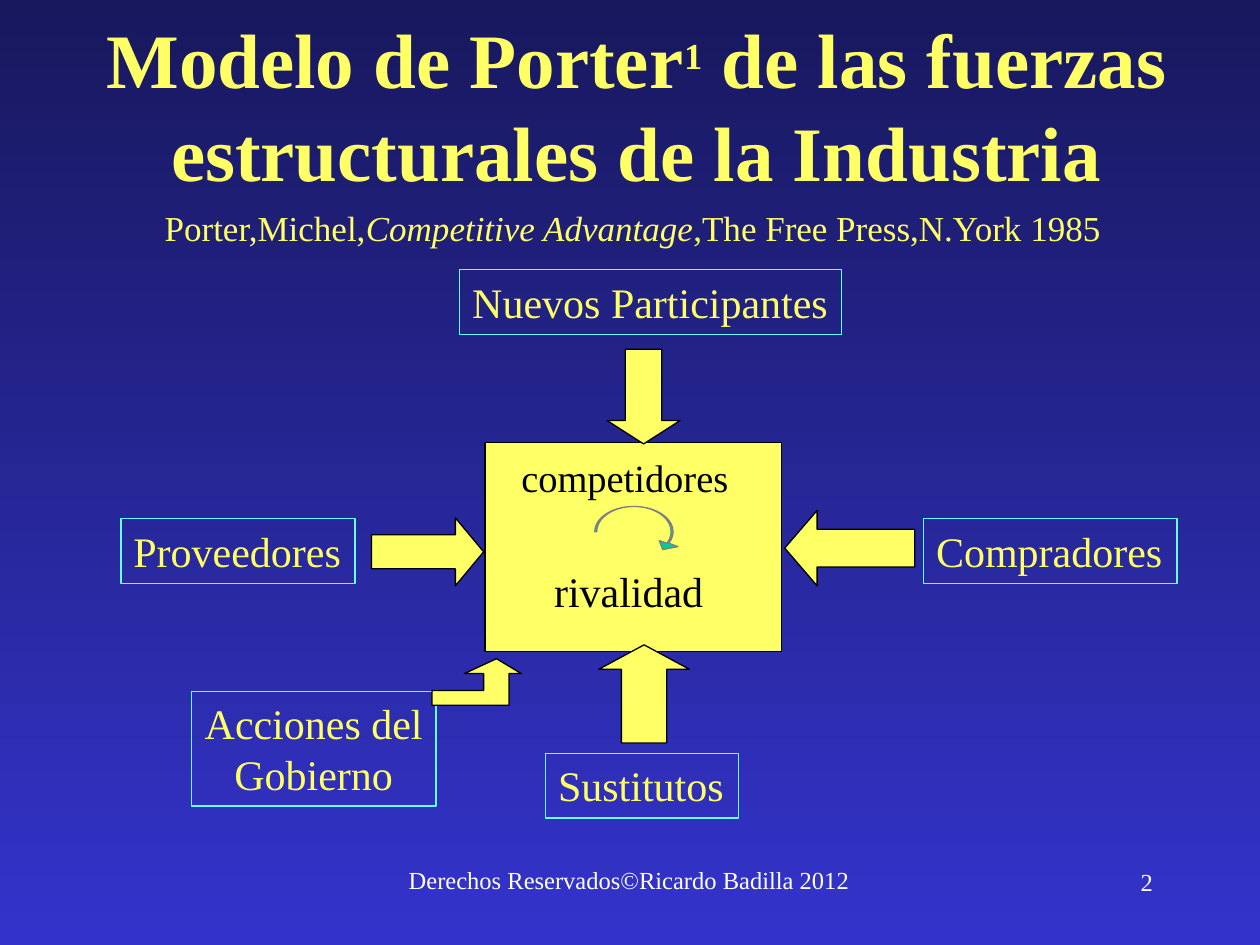
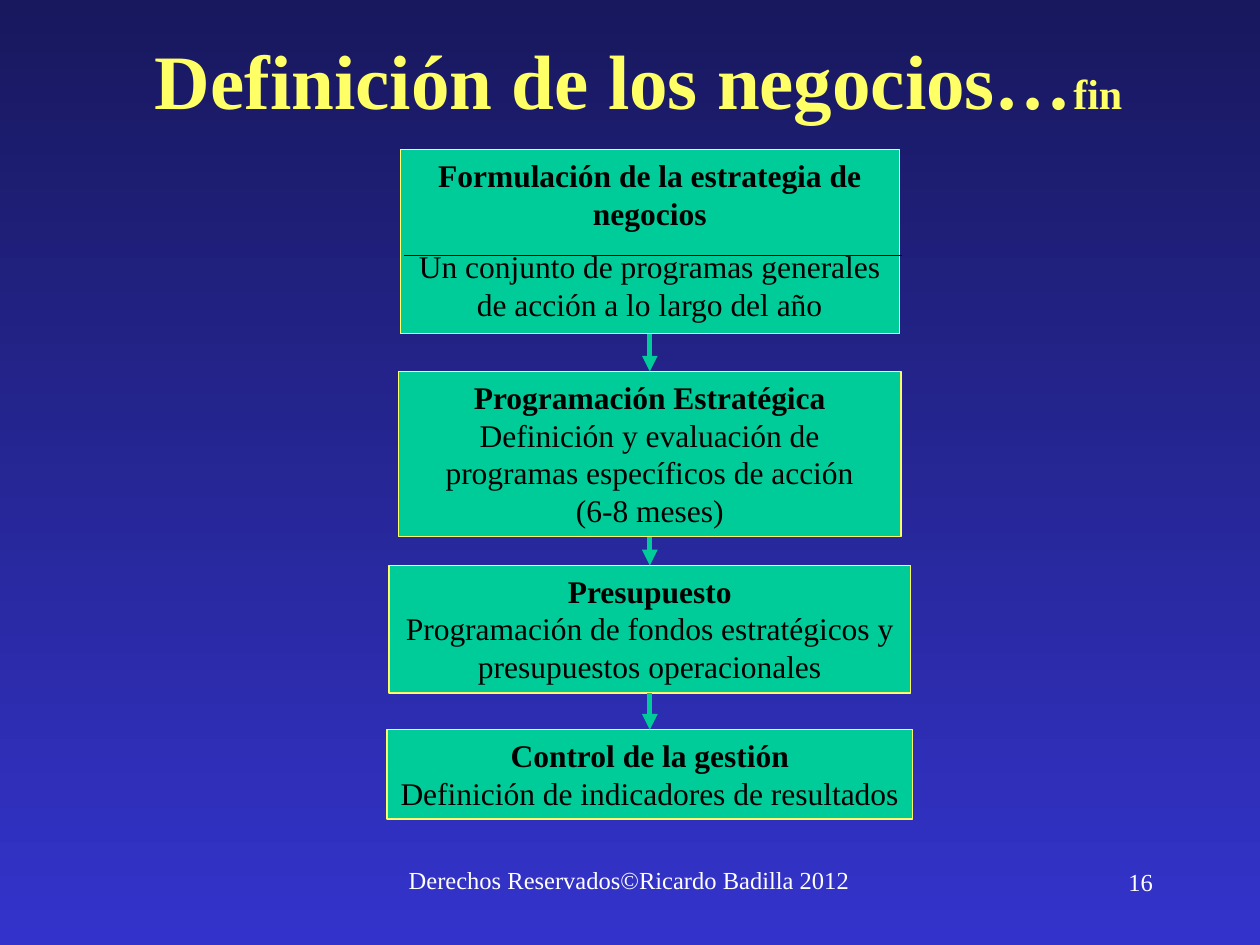
from collections import namedtuple
from math import cos, radians, sin

from lxml import etree
from pptx import Presentation
from pptx.dml.color import RGBColor
from pptx.enum.shapes import MSO_CONNECTOR, MSO_SHAPE
from pptx.enum.text import MSO_ANCHOR, PP_ALIGN
from pptx.oxml.ns import qn
from pptx.util import Cm, Pt

Box = namedtuple("Box", "left top width height")
LEFT, CENTER, RIGHT = PP_ALIGN.LEFT, PP_ALIGN.CENTER, PP_ALIGN.RIGHT
TOP, MIDDLE = MSO_ANCHOR.TOP, MSO_ANCHOR.MIDDLE
STRAIGHT = MSO_CONNECTOR.STRAIGHT
RECTANGLE = MSO_SHAPE.RECTANGLE
RIGHT_ARROW, LEFT_ARROW = MSO_SHAPE.RIGHT_ARROW, MSO_SHAPE.LEFT_ARROW
UP_ARROW, DOWN_ARROW = MSO_SHAPE.UP_ARROW, MSO_SHAPE.DOWN_ARROW
BOTTOM_SITE, TOP_SITE = 2, 0

FONT = "Times New Roman"
COLORS = {
    "night": "18185E",
    "blue": "3333CC",
    "yellow": "FFFF66",
    "cyan": "66FFFF",
    "green": "00CC99",
    "gray": "808080",
    "black": "000000",
    "white": "FFFFFF",
}
TITLE = {"size": Pt(44), "bold": True}
SOURCE = {"size": Pt(20)}
LABEL = {"size": Pt(24)}
RIVALS = {"size": Pt(22)}
STEP_HEAD = {"size": Pt(18), "bold": True}
STEP_BODY = {"size": Pt(18)}
FOOTER = {"size": Pt(14)}


def rgb(name):
    """Return the named colour."""
    return RGBColor.from_string(COLORS[name])


def inside(region, left, top, width, height):
    """Return a box placed relative to a region."""
    return Box(region.left + left, region.top + top, width, height)


def write(shape, paras, color, align=LEFT, anchor=TOP, wrap=True, gap=0):
    """Fill a shape with paragraphs, each a list of (text, format) spans."""
    frame = shape.text_frame
    frame.word_wrap = wrap
    frame.vertical_anchor = anchor
    for index, spans in enumerate(paras):
        para = frame.paragraphs[0] if index == 0 else frame.add_paragraph()
        para.alignment = align
        if index and gap:
            para.space_before = Pt(gap)
        for text, values in spans:
            span = para.add_run()
            span.text = text
            span.font.name = FONT
            span.font.color.rgb = rgb(color)
            for name, value in values.items():
                setattr(span.font, name, value)


def add_text(page, box, paras, color, **layout):
    """Add a text box."""
    shape = page.shapes.add_textbox(*map(Cm, box))
    write(shape, paras, color, **layout)
    return shape


def paint(shape, fill, line):
    """Give a shape its fill and thin outline, without shadow."""
    shape.shadow.inherit = False
    if fill:
        shape.fill.solid()
        shape.fill.fore_color.rgb = rgb(fill)
    else:
        shape.fill.background()
    shape.line.color.rgb = rgb(line)
    shape.line.width = Pt(0.75)


def add_block(page, kind, box, fill, line):
    """Add a painted preset shape."""
    shape = page.shapes.add_shape(kind, *map(Cm, box))
    paint(shape, fill, line)
    return shape


def add_outline(page, left, top, points, fill, line):
    """Add a closed outline whose points are relative to left and top."""
    corners = [(Cm(left + x), Cm(top + y)) for x, y in points]
    builder = page.shapes.build_freeform(*corners[0])
    builder.add_line_segments(corners[1:], close=True)
    paint(builder.convert_to_shape(), fill, line)


def add_line(page, ends, color, width):
    """Add a straight line between two points."""
    line = page.shapes.add_connector(STRAIGHT, *map(Cm, ends))
    line.line.color.rgb = rgb(color)
    line.line.width = Pt(width)
    etree.SubElement(line._element.spPr, qn("a:effectLst"))
    return line


def join(page, upper, lower):
    """Link two blocks with a downward arrow."""
    arrow = add_line(page, (0, 0, 1, 1), "green", 3)
    arrow.begin_connect(upper, BOTTOM_SITE)
    arrow.end_connect(lower, TOP_SITE)
    tail = etree.SubElement(arrow._element.spPr.find(qn("a:ln")), qn("a:tailEnd"))
    tail.set("type", "triangle")


def add_page(deck, number, title_box, title):
    """Add a page with gradient background, title and footer."""
    page = deck.slides.add_slide(deck.slide_layouts[6])
    fill = page.background.fill
    fill.gradient()
    fill.gradient_angle = 270
    for stop, name in zip(fill.gradient_stops, ("night", "blue")):
        stop.color.rgb = rgb(name)
    add_text(page, Box(7.49, 17.32, 10.39, 1.27),
             [[("Derechos Reservados©Ricardo Badilla 2012", FOOTER)]],
             "white", align=CENTER)
    add_text(page, Box(18.21, 17.35, 5.28, 1.27), [[(number, FOOTER)]],
             "white", align=RIGHT)
    heading = add_text(page, title_box, [title], "yellow", align=CENTER, anchor=MIDDLE)
    return page, heading


def draw_rivalry(page, box):
    """Draw the central block with its circular arrow."""
    add_block(page, RECTANGLE, box, "yellow", "black")
    sweep = range(-180, 28, 9)
    inner = [(0.75 * cos(radians(a)), 0.51 * sin(radians(a))) for a in reversed(sweep)]
    outer = [(0.79 * cos(radians(a)), 0.51 * sin(radians(a))) for a in sweep]
    head = [(0.89, 0.3), (0.58, 0.36), (0.51, 0.18)]
    add_outline(page, box.left + 3, box.top + 1.8, inner + outer + head, "green", "gray")
    add_text(page, inside(box, 1.14, 2.36, 3.51, 1.27), [[("rivalidad", LABEL)]], "black")
    add_text(page, inside(box, 0.48, 0.1, 4.7, 1.19), [[("competidores", RIVALS)]], "black")


def draw_forces(page, region):
    """Draw the forces around the rivalry block."""
    draw_rivalry(page, inside(region, 7.34, 3.48, 5.97, 4.22))
    arrows = [
        (RIGHT_ARROW, (5.05, 5, 2.26, 1.37), 0.415),
        (LEFT_ARROW, (13.38, 4.85, 2.62, 1.52), 0.43),
        (UP_ARROW, (9.63, 7.56, 1.83, 1.98), 0.27),
        (DOWN_ARROW, (9.8, 1.6, 1.47, 1.91), 0.32),
    ]
    for kind, place, head in arrows:
        arrow = add_block(page, kind, inside(region, *place), "yellow", "black")
        arrow.adjustments[1] = head
    labels = [
        (["Nuevos Participantes"], (6.83, 0, 7.7, 1.3)),
        (["Sustitutos"], (8.56, 9.75, 3.89, 1.3)),
        (["Compradores"], (16.18, 5.02, 5.11, 1.3)),
        (["Proveedores"], (0, 5.02, 4.72, 1.3)),
        (["Acciones del", "Gobierno"], (1.42, 8.5, 4.93, 2.31)),
    ]
    for lines, place in labels:
        label = add_block(page, RECTANGLE, inside(region, *place), None, "cyan")
        write(label, [[(text, LABEL)] for text in lines], "yellow",
              align=CENTER if len(lines) > 1 else LEFT, wrap=False)
    bend = [(1.3, 0), (0.65, 0.3), (1.04, 0.3), (1.04, 0.64), (0, 0.64),
            (0, 0.94), (1.55, 0.94), (1.55, 0.3), (1.8, 0.3)]
    add_outline(page, region.left + 6.27, region.top + 7.84, bend, "yellow", "black")


def draw_steps(page, region):
    """Draw the planning steps, centred in the region and linked downward."""
    steps = [
        (0, 10.06, 3.71, 9, True, "Formulación de la estrategia de negocios",
         ["Un conjunto de programas generales de acción a lo largo del año"]),
        (4.47, 10.13, 3.33, 0, True, "Programación Estratégica",
         ["Definición y evaluación de programas específicos de acción", "(6-8 meses)"]),
        (8.38, 10.52, 2.57, 0, True, "Presupuesto",
         ["Programación de fondos estratégicos y presupuestos operacionales"]),
        (11.69, 10.6, 1.8, 0, False, "Control de la gestión",
         ["Definición de indicadores de resultados"]),
    ]
    blocks = []
    for top, width, height, gap, wrap, head, body in steps:
        place = inside(region, (region.width - width) / 2, top, width, height)
        block = add_block(page, RECTANGLE, place, "green", "yellow")
        paras = [[(head, STEP_HEAD)]] + [[(text, STEP_BODY)] for text in body]
        write(block, paras, "black", align=CENTER, wrap=wrap, gap=gap)
        blocks.append(block)
    rule = region.top + 2.13
    add_line(page, (region.left + 0.35, rule, region.left + 10.39, rule), "black", 0.75)
    for upper, lower in zip(blocks, blocks[1:]):
        join(page, upper, lower)


def forces_page(deck):
    """Build the page on the forces of the industry."""
    title = [("Modelo de Porter", TITLE), ("1", {**TITLE, "size": Pt(36)}),
             (" de las fuerzas estructurales de la Industria", TITLE)]
    page, heading = add_page(deck, "2", Box(0.91, 0.51, 23.85, 3.18), title)
    note = heading.text_frame.paragraphs[0].runs[1]
    note._r.get_or_add_rPr().set("baseline", "30000")
    add_text(page, Box(3.07, 4.04, 19.69, 1.09),
             [[("Porter,Michel,", SOURCE),
               ("Competitive Advantage", {**SOURCE, "italic": True}),
               (",The Free Press,N.York 1985", SOURCE)]], "yellow")
    draw_forces(page, Box(2.44, 5.44, 21.29, 11.05))


def steps_page(deck):
    """Build the page on the definition of the businesses."""
    title = [("Definición de los negocios…", TITLE), ("fin", {**TITLE, "size": Pt(24)})]
    page, _ = add_page(deck, "16", Box(2.08, 0, 21.59, 3.18), title)
    draw_steps(page, Box(7.8, 3.02, 10.6, 13.49))


def main():
    """Build and save the deck."""
    deck = Presentation()
    deck.slide_width, deck.slide_height = Cm(25.4), Cm(19.05)
    forces_page(deck)
    steps_page(deck)
    deck.save("out.pptx")


if __name__ == "__main__":
    main()
